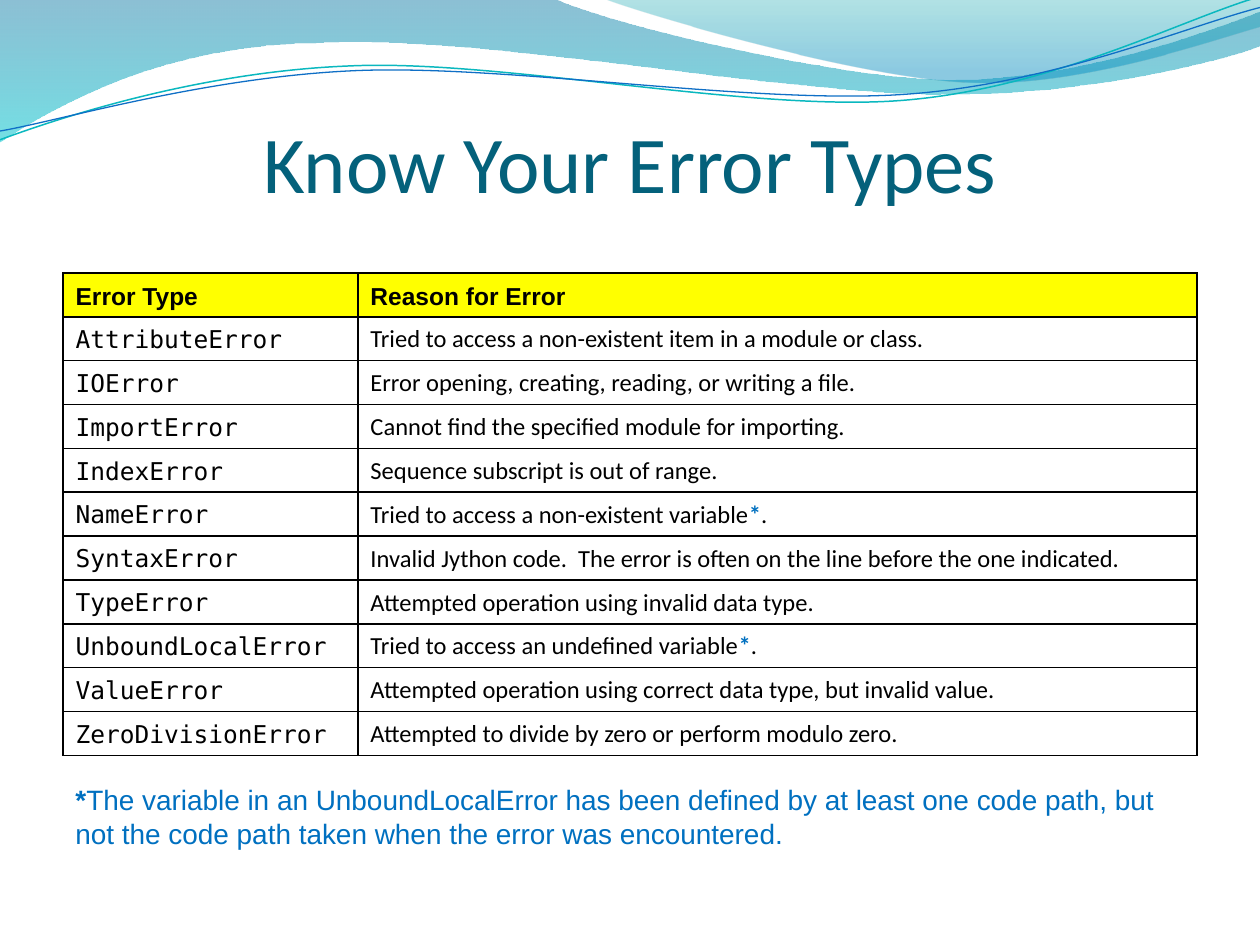
from dataclasses import dataclass
from typing import Optional

from lxml import etree
from pptx import Presentation
from pptx import util as u
from pptx.dml import color
from pptx.enum import text
from pptx.oxml import ns


@dataclass(frozen=True)
class Theme:
    title: str = "04617B"
    ink: str = "000000"
    accent: str = "0070C0"
    header: str = "FFFF00"
    title_size: float = 46
    table_size: float = 14
    note_size: float = 16
    title_font: str = "Calibri"
    body_font: str = "Calibri"
    label_font: str = "Arial"
    code_font: str = "DejaVu Sans Mono"


@dataclass(frozen=True)
class Span:
    words: str
    font: str
    size: float
    tint: str
    bold: bool = False


@dataclass(frozen=True)
class Stop:
    position: float
    tint: str
    opacity: int


@dataclass(frozen=True)
class Band:
    start: tuple
    segments: tuple
    stops: tuple


@dataclass(frozen=True)
class Strand:
    start: tuple
    segments: tuple
    tint: str
    width: float
    rotation: float = -2.7


THEME = Theme()

BANDS = (
    Band((0, -0.7), (
        (316.8, -0.7),
        (342.7, 12.2, 478.1, 45.4, 545.8, 45.4),
        (614.2, 45.4, 689.8, 18.7, 720, 6.5),
        (720.7, 25.9),
        (707.8, 31.7, 626.4, 54.7, 537.1, 54),
        (447.8, 54, 275, 20.2, 185, 24.5),
        (92.9, 25.2, 33.1, 59.8, -0.7, 81.4),
    ), (Stop(0, "0074A1", 45), Stop(1, "00C6CF", 55))),
    Band((344.9, -0.7), (
        (366.5, 7.9, 491, 44.6, 553.7, 46.8),
        (616.3, 49.7, 691.9, 23, 720, 15.1),
        (720, 0),
    ), (Stop(0, "00A1A9", 30), Stop(0.8, "008BBF", 45))),
)

STRANDS = (
    Strand((-1.4, 62.9), (
        (33.8, 51.8, 113.8, 29.5, 200.2, 30.2),
        (285.1, 30.2, 425.5, 67, 512.6, 64.8),
        (599, 62.6, 676.8, 25.9, 720, 15.5),
    ), "0AB8BF", 0.85),
    Strand((-1.2, 57.9), (
        (33, 53.7, 118.3, 32.5, 204, 33),
        (290.5, 33.5, 429, 63.1, 515.5, 61.3),
        (601.4, 59.6, 678.5, 30.1, 721.4, 21.3),
    ), "0F6FC6", 0.75),
)

ERRORS = (
    ("AttributeError", "Tried to access a non-existent item in a module or class."),
    ("IOError", "Error opening, creating, reading, or writing a file."),
    ("ImportError", "Cannot find the specified module for importing."),
    ("IndexError", "Sequence subscript is out of range."),
    ("NameError", "Tried to access a non-existent variable*."),
    ("SyntaxError", "Invalid Jython code.  The error is often on the line before the one indicated."),
    ("TypeError", "Attempted operation using invalid data type."),
    ("UnboundLocalError", "Tried to access an undefined variable*."),
    ("ValueError", "Attempted operation using correct data type, but invalid value."),
    ("ZeroDivisionError", "Attempted to divide by zero or perform modulo zero."),
)


def rgb(tint: str) -> color.RGBColor:
    return color.RGBColor.from_string(tint)


def add_spans(para, spans) -> None:
    for span in spans:
        run = para.add_run()
        run.text = span.words
        run.font.name = span.font
        run.font.size = u.Pt(span.size)
        run.font.bold = span.bold
        run.font.color.rgb = rgb(span.tint)


def draw_outline(page, start: tuple, segments: tuple, close: bool):
    points = [(u.Pt(x), u.Pt(y)) for segment in segments
              for x, y in zip(segment[::2], segment[1::2])]
    builder = page.shapes.build_freeform(*map(u.Pt, start))
    builder.add_line_segments(points, close=close)
    shape = builder.convert_to_shape()
    shape.shadow.inherit = False
    corners = iter(list(shape.element.spPr.iter(ns.qn("a:lnTo"))))
    for segment in segments:
        parts = [next(corners) for _ in segment[::2]]
        if len(parts) == 3:
            curve = etree.Element(ns.qn("a:cubicBezTo"))
            parts[0].addprevious(curve)
            for part in parts:
                curve.append(part[0])
                part.getparent().remove(part)
    return shape


def draw_band(page, band: Band) -> None:
    shape = draw_outline(page, band.start, band.segments, True)
    shape.line.fill.background()
    shape.fill.gradient()
    shape.fill.gradient_angle = 270
    for target, stop in zip(shape.fill.gradient_stops, band.stops):
        target.position = stop.position
        target.color.rgb = rgb(stop.tint)
    for tint, stop in zip(shape.element.spPr.iter(ns.qn("a:srgbClr")), band.stops):
        etree.SubElement(tint, ns.qn("a:alpha"), val=str(stop.opacity * 1000))


def draw_strand(page, strand: Strand):
    shape = draw_outline(page, strand.start, strand.segments, False)
    shape.fill.background()
    shape.line.color.rgb = rgb(strand.tint)
    shape.line.width = u.Pt(strand.width)
    shape.rotation = strand.rotation
    return shape


def fill_cell(cell, spans, background: Optional[str] = None) -> None:
    properties = cell._tc.get_or_add_tcPr()
    for side in ("a:lnL", "a:lnR", "a:lnT", "a:lnB"):
        line = etree.SubElement(properties, ns.qn(side), w=str(u.Pt(1)))
        fill = etree.SubElement(line, ns.qn("a:solidFill"))
        etree.SubElement(fill, ns.qn("a:srgbClr"), val=THEME.ink)
    if background:
        cell.fill.solid()
        cell.fill.fore_color.rgb = rgb(background)
    else:
        cell.fill.background()
    cell.vertical_anchor = text.MSO_ANCHOR.BOTTOM
    para = cell.text_frame.paragraphs[0]
    hanging = u.Pt(36.7)
    properties = para._p.get_or_add_pPr()
    properties.set("marL", str(hanging))
    properties.set("indent", str(-hanging))
    add_spans(para, spans)


def reason_spans(reason: str) -> list:
    before, star, after = reason.partition("*")
    spans = [Span(before, THEME.body_font, THEME.table_size, THEME.ink)]
    if star:
        spans += [Span(star, THEME.body_font, THEME.table_size, THEME.accent, True),
                  Span(after, THEME.body_font, THEME.table_size, THEME.ink)]
    return spans


def draw_title(page) -> None:
    title = page.shapes.title
    title.left, title.top, title.width, title.height = map(u.Pt, (36, 29.8, 648, 90))
    frame = title.text_frame
    frame.margin_left = frame.margin_right = frame.margin_bottom = 0
    frame.vertical_anchor = text.MSO_ANCHOR.BOTTOM
    frame.auto_size = text.MSO_AUTO_SIZE.NONE
    para = frame.paragraphs[0]
    para.alignment = text.PP_ALIGN.CENTER
    add_spans(para, [Span("Know Your Error Types", THEME.title_font, THEME.title_size, THEME.title)])
    page.shapes.element.append(title.element)


def draw_table(page) -> None:
    count = len(ERRORS) + 1
    table = page.shapes.add_table(count, 2, *map(u.Pt, (36, 156, 648, 275.8))).table
    table.horz_banding = False
    for column, width in zip(table.columns, (168.5, 479.5)):
        column.width = u.Pt(width)
    for row in table.rows:
        row.height = u.Pt(275.8 / count)
    for column, label in enumerate(("Error Type", "Reason for Error")):
        heading = Span(label, THEME.label_font, THEME.table_size, THEME.ink, True)
        fill_cell(table.cell(0, column), [heading], THEME.header)
    for index, (name, reason) in enumerate(ERRORS, 1):
        code = Span(name, THEME.code_font, THEME.table_size, THEME.ink)
        fill_cell(table.cell(index, 0), [code])
        fill_cell(table.cell(index, 1), reason_spans(reason))


def draw_note(page) -> None:
    box = page.shapes.add_textbox(*map(u.Pt, (36, 443.9, 642.2, 46.1)))
    box.text_frame.word_wrap = True
    note = ("The variable in an UnboundLocalError has been defined by at least one code path, "
            "but not the code path taken when the error was encountered.")
    add_spans(box.text_frame.paragraphs[0], [
        Span("*", THEME.label_font, THEME.note_size, THEME.accent, True),
        Span(note, THEME.label_font, THEME.note_size, THEME.accent),
    ])


def main() -> None:
    deck = Presentation()
    deck.slide_width, deck.slide_height = u.Pt(720), u.Pt(540)
    page = deck.slides.add_slide(deck.slide_layouts[5])
    for band in BANDS:
        draw_band(page, band)
    page.shapes.add_group_shape([draw_strand(page, strand) for strand in STRANDS])
    draw_title(page)
    draw_table(page)
    draw_note(page)
    deck.save("out.pptx")


if __name__ == "__main__":
    main()
